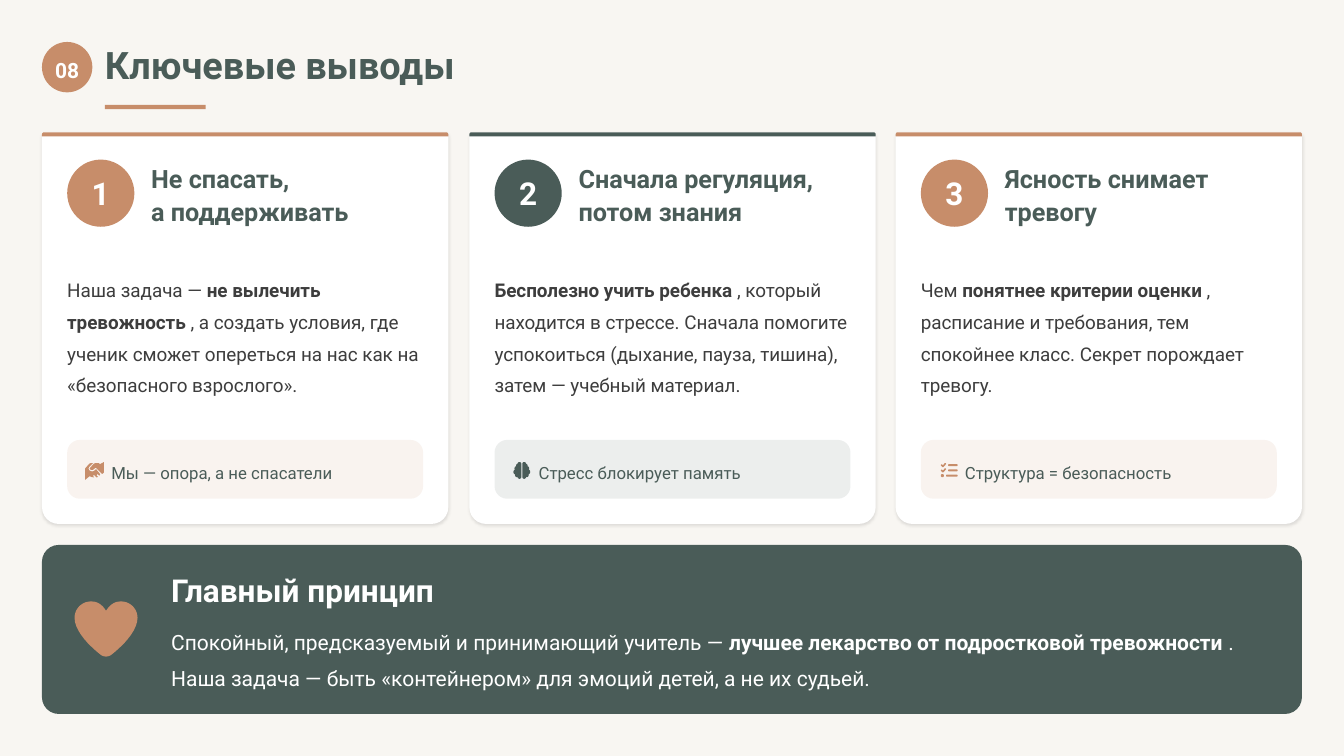
from lxml import etree
from pptx import Presentation
from pptx.dml.color import RGBColor
from pptx.enum.shapes import MSO_SHAPE
from pptx.enum.text import MSO_ANCHOR, PP_ALIGN
from pptx.oxml.ns import qn
from pptx.util import Pt

PX = 9525
OVAL, RECT = MSO_SHAPE.OVAL, MSO_SHAPE.RECTANGLE
ROUND, TOPPED = MSO_SHAPE.ROUNDED_RECTANGLE, MSO_SHAPE.ROUND_2_SAME_RECTANGLE
LEFT, CENTER = PP_ALIGN.LEFT, PP_ALIGN.CENTER
CLAY, PINE, WHITE, INK, PAPER = "C78D6A", "4A5C58", "FFFFFF", "3D3D3D", "F8F6F2"
rgb = RGBColor.from_string

deck = Presentation()
deck.slide_width, deck.slide_height = 1280 * PX, 720 * PX
slide = deck.slides.add_slide(deck.slide_layouts[6])
slide.background.fill.solid()
slide.background.fill.fore_color.rgb = rgb(PAPER)
shapes = slide.shapes


def draw(kind, x, y, w, h, color, radii=()):
    """Add a borderless preset shape; radii are corner radii in px."""
    shape = shapes.add_shape(kind, x * PX, y * PX, w * PX, h * PX)
    shape.shadow.inherit = False
    shape.fill.solid()
    shape.fill.fore_color.rgb = rgb(color)
    shape.line.fill.background()
    for i, radius in enumerate(radii):
        shape.adjustments[i] = radius / min(w, h)
    return shape


def write(text, x, y, w, h, size, color, bold=False, align=LEFT, space=None):
    """Add a text box; each line is a paragraph, and *stars* mark bold."""
    frame = shapes.add_textbox(x * PX, y * PX, w * PX, h * PX).text_frame
    frame.word_wrap = True
    frame.vertical_anchor = MSO_ANCHOR.MIDDLE
    frame.margin_left = frame.margin_right = frame.margin_top = frame.margin_bottom = 0
    for n, line in enumerate(text.split("\n")):
        para = frame.add_paragraph() if n else frame.paragraphs[0]
        para.alignment, para.line_spacing = align, space
        for i, part in enumerate(line.split("*")):
            if part:
                run = para.add_run()
                run.text = part
                font = run.font
                font.name, font.size, font.color.rgb = "Roboto", Pt(size), rgb(color)
                font.bold = bold or i % 2 == 1


# Header
draw(OVAL, 40, 40, 48, 48, CLAY)
write("08", 35, 40, 58, 48, 15, WHITE, bold=True, align=CENTER, space=1.2)
write("Ключевые выводы", 100, 44, 340, 40, 27, PINE, bold=True, space=0.9)
draw(RECT, 100, 100, 96, 4, CLAY)

# Cards
cards = [
    (CLAY, "Не спасать,\nа поддерживать",
     "Наша задача — *не вылечить тревожность *, а создать условия, где ученик "
     "сможет опереться на нас как на «безопасного взрослого».",
     "Мы — опора, а не спасатели"),
    (PINE, "Сначала регуляция,\nпотом знания",
     "*Бесполезно учить ребенка *, который находится в стрессе. Сначала помогите "
     "успокоиться (дыхание, пауза, тишина), затем — учебный материал.",
     "Стресс блокирует память"),
    (CLAY, "Ясность снимает\nтревогу",
     "Чем *понятнее критерии оценки *, расписание и требования, тем спокойнее "
     "класс. Секрет порождает тревогу.",
     "Структура = безопасность"),
]
for i, (tone, head, body, note) in enumerate(cards):
    x = 40 + round(i * 1220 / 3)
    card = draw(TOPPED, x, 126, 387, 373, WHITE, (4, 16))
    effects = card._element.spPr.find(qn("a:effectLst"))
    shade = etree.SubElement(effects, qn("a:outerShdw"), blurRad=str(Pt(2.2)),
                             dist=str(Pt(0.8)), dir="5400000", rotWithShape="0")
    black = etree.SubElement(shade, qn("a:srgbClr"), val="000000")
    etree.SubElement(black, qn("a:alpha"), val="10000")
    draw(TOPPED, x, 126, 387, 4, tone, (2, 0))
    draw(OVAL, x + 24, 152, 64, 64, tone)
    write(str(i + 1), x + 17, 152, 78, 64, 22.5, WHITE, bold=True, align=CENTER)
    write(head, x + 104, 152, 270, 64, 18, PINE, bold=True, space=1.1)
    write(body, x + 24, 232, 348, 171, 13.5, INK, space=1.4)
    pill = draw(ROUND, x + 24, 419, 339, 56, tone, (12,))
    tint = pill._element.spPr.find(qn("a:solidFill"))[0]
    etree.SubElement(tint, qn("a:alpha"), val="10000")
    write(note, x + 66, 435, 289, 24, 12, PINE, space=1.3)

# Main principle
draw(ROUND, 40, 519, 1200, 161, PINE, (16,))
write("Главный принцип", 163, 543, 1068, 37, 22.5, WHITE, bold=True)
write("Спокойный, предсказуемый и принимающий учитель — *лучшее лекарство от "
      "подростковой тревожности *. Наша задача — быть «контейнером» для эмоций "
      "детей, а не их судьей.", 163, 591, 1063, 66, 15, WHITE, space=1.4)

# Icons on a 512-unit grid: pairs are corners, sixes are Bézier curves
hands = [
    [(275, 50), (155, 175), (140, 190, 140, 210, 155, 220), (185, 250, 240, 250, 270, 220),
     (310, 180), (330, 175), (345, 185), (525, 365), (576, 320), (576, 0), (460, 65),
     (440, 45, 415, 32, 390, 32), (340, 32), (315, 32, 295, 38, 275, 50)],
    [(130, 150), (250, 32), (195, 32), (165, 32, 140, 45, 120, 65), (0, 200), (0, 545),
     (145, 430), (175, 450, 210, 465, 250, 465), (280, 465), (255, 440),
     (240, 405, 270, 385, 295, 410), (350, 465), (370, 465, 385, 462, 400, 455),
     (360, 415), (350, 380, 380, 360, 400, 380), (435, 415), (460, 395, 465, 375, 455, 360),
     (335, 215), (305, 245), (250, 300, 175, 295, 130, 245), (105, 215, 105, 180, 130, 150)],
]
lobe = [
    (184, 0), (215, 0, 240, 25, 240, 56), (240, 456), (240, 487, 215, 512, 184, 512),
    (155, 512, 131, 490, 128, 462), (123, 463, 118, 464, 112, 464),
    (77, 464, 48, 435, 48, 400), (48, 393, 49, 385, 52, 379), (21, 367, 0, 338, 0, 304),
    (0, 272, 19, 244, 46, 232), (37, 221, 32, 207, 32, 192), (32, 161, 54, 136, 82, 129),
    (81, 124, 80, 118, 80, 112), (80, 82, 101, 57, 128, 50), (131, 22, 155, 0, 184, 0),
]
brain = [lobe, [[n if k % 2 else 512 - n for k, n in enumerate(step)] for step in lobe]]
ticks = [
    [(152, 38 + d), (162, 47 + d, 163, 62 + d, 154, 72 + d), (82, 152 + d),
     (73, 162 + d, 57, 163 + d, 47, 153 + d), (7, 113 + d),
     (-2, 104 + d, -2, 88 + d, 7, 79 + d), (16, 70 + d, 32, 70 + d, 41, 79 + d),
     (63, 101 + d), (118, 40 + d), (127, 30 + d, 142, 29 + d, 152, 38 + d)]
    for d in (0, 160)
]
bars = [
    [(l, y - r), (e, y - r), (e + r * 4 / 3, y - r, e + r * 4 / 3, y + r, e, y + r),
     (l, y + r), (l - r * 4 / 3, y + r, l - r * 4 / 3, y - r, l, y - r)]
    for l, e, y, r in [(256, 480, 96, 32), (256, 480, 256, 32),
                       (192, 480, 416, 32), (48, 48, 416, 48)]
]
heart = [[
    (241, 87), (256, 108), (271, 87), (296, 52, 336, 32, 379, 32),
    (452, 32, 512, 92, 512, 165), (512, 280, 372, 410, 299, 466),
    (287, 475, 272, 480, 256, 480), (240, 480, 225, 475, 213, 466),
    (140, 410, 0, 280, 0, 165), (0, 92, 60, 32, 133, 32), (176, 32, 216, 52, 241, 87),
]]
icons = [(hands, 81, 440, 16, CLAY), (brain, 489, 440, 16, PINE),
         (ticks + bars, 896, 440, 16, CLAY), (heart, 71, 569, 60, CLAY)]
for loops, x, y, size, tone in icons:
    pen = None
    for loop in loops:
        dots = []
        for step in loop:
            if len(step) == 2:
                dots.append(tuple(step))
                continue
            (ax, ay), (bx, by, cx, cy, dx, dy) = dots[-1], step
            for t in [k / 10 for k in range(1, 11)]:
                u = 1 - t
                a, b, c, d = u ** 3, 3 * u * u * t, 3 * u * t * t, t ** 3
                dots.append((a * ax + b * bx + c * cx + d * dx,
                             a * ay + b * by + c * cy + d * dy))
        if pen:
            pen.move_to(*dots[0])
        else:
            pen = shapes.build_freeform(*dots[0], scale=size * PX / 512)
        pen.add_line_segments(dots[1:], close=True)
    icon = pen.convert_to_shape(x * PX, y * PX)
    icon.shadow.inherit = False
    icon.fill.solid()
    icon.fill.fore_color.rgb = rgb(tone)
    icon.line.fill.background()

deck.save("out.pptx")
